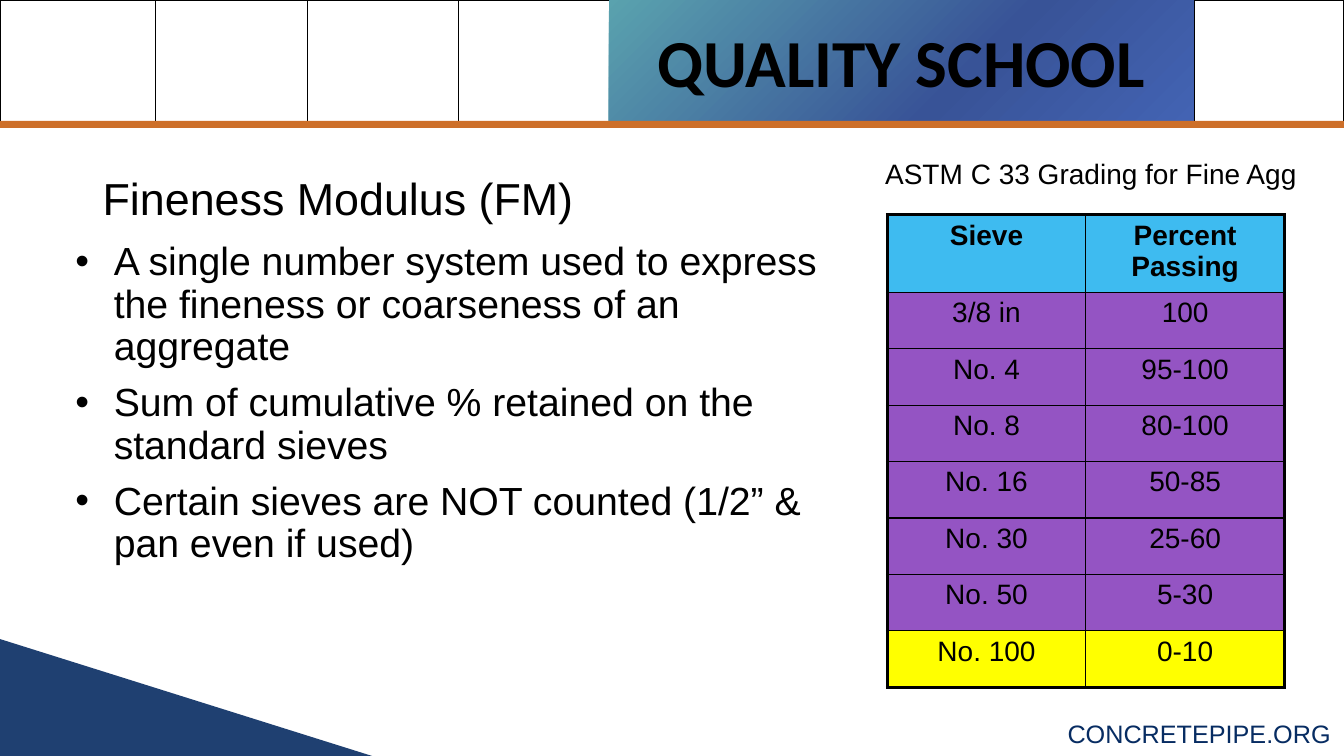
"""Build the Fineness Modulus slide of the Quality School deck."""
import lxml.etree
import pptx
import pptx.dml.color
import pptx.enum.shapes
import pptx.enum.text
import pptx.oxml
import pptx.oxml.ns
import pptx.util

COLORS = {
    "ink": "000000",
    "teal": "5AA2AE",
    "indigo": "385397",
    "blue": "4363B3",
    "orange": "CD6F29",
    "navy": "072C62",
    "header": "3EBBF0",
    "purple": "9454C3",
    "yellow": "FFFF00",
}
EMU_PER_PX = 9144
SLIDE_WIDTH, SLIDE_HEIGHT = 1333, 750
RECTANGLE = pptx.enum.shapes.MSO_SHAPE.RECTANGLE
CENTER = pptx.enum.text.PP_ALIGN.CENTER
FRAME_SPANS = [(0, 154), (154, 305), (305, 455), (455, 606), (1185, 1333)]
BULLETS = [
    "A single number system used to express the fineness or coarseness of an aggregate",
    "Sum of cumulative % retained on the standard sieves",
    "Certain sieves are NOT counted (1/2” & pan even if used)",
]
GRADING = [
    ("Sieve", "Percent Passing"),
    ("3/8 in", "100"),
    ("No. 4", "95-100"),
    ("No. 8", "80-100"),
    ("No. 16", "50-85"),
    ("No. 30", "25-60"),
    ("No. 50", "5-30"),
    ("No. 100", "0-10"),
]


def px(*lengths):
    """Turn pixel lengths into EMU."""
    return [pptx.util.Emu(length * EMU_PER_PX) for length in lengths]


def rgb(name):
    """Look up a named colour."""
    return pptx.dml.color.RGBColor.from_string(COLORS[name])


def set_font(paragraph, size, color="ink", name="Arial", bold=False):
    """Format every run of a paragraph."""
    for run in paragraph.runs:
        run.font.name = name
        run.font.size = pptx.util.Pt(size)
        run.font.bold = bold
        run.font.color.rgb = rgb(color)


def add_shape(slide, kind, box, fill=None, line=None):
    """Add a preset shape with an optional fill and outline."""
    shape = slide.shapes.add_shape(kind, *px(*box))
    shape.shadow.inherit = False
    if fill:
        shape.fill.solid()
        shape.fill.fore_color.rgb = rgb(fill)
    else:
        shape.fill.background()
    if line:
        shape.line.color.rgb = rgb(line)
        shape.line.width = pptx.util.Pt(1)
    else:
        shape.line.fill.background()
    return shape


def set_gradient(shape, stops, angle):
    """Fill a shape with a linear gradient of (percent, colour) stops."""
    shape.fill.gradient()
    shape.fill.gradient_angle = angle
    stop_list = shape.element.find(".//" + pptx.oxml.ns.qn("a:gsLst"))
    for stop in list(stop_list):
        stop_list.remove(stop)
    for percent, color in stops:
        stop = lxml.etree.SubElement(
            stop_list, pptx.oxml.ns.qn("a:gs"), pos=str(percent * 1000))
        lxml.etree.SubElement(
            stop, pptx.oxml.ns.qn("a:srgbClr"), val=COLORS[color])


def add_text(slide, box, lines, size, color="ink", wrap=True, spacing=None):
    """Add a text box and return its text frame."""
    text_frame = slide.shapes.add_textbox(*px(*box)).text_frame
    text_frame.word_wrap = wrap
    text_frame.text = "\n".join(lines)
    for paragraph in text_frame.paragraphs:
        paragraph.line_spacing = spacing
        set_font(paragraph, size, color)
    return text_frame


def add_bullets(slide, box, lines):
    """Add a bulleted list with hanging indents."""
    text_frame = add_text(slide, box, lines, 28, spacing=0.9)
    indent = px(38)[0]
    for index, paragraph in enumerate(text_frame.paragraphs):
        if index:
            paragraph.space_before = pptx.util.Pt(10)
        properties = paragraph._p.get_or_add_pPr()
        properties.set("marL", str(indent))
        properties.set("indent", str(-indent))
        lxml.etree.SubElement(
            properties, pptx.oxml.ns.qn("a:buFont"), typeface="Arial")
        lxml.etree.SubElement(
            properties, pptx.oxml.ns.qn("a:buChar"), char="•")


def set_borders(cell, widths):
    """Draw cell borders from point widths keyed by side."""
    properties = cell._tc.get_or_add_tcPr()
    for side, width in widths.items():
        line = lxml.etree.SubElement(
            properties, pptx.oxml.ns.qn("a:ln" + side),
            w=str(pptx.util.Pt(width)))
        fill = lxml.etree.SubElement(line, pptx.oxml.ns.qn("a:solidFill"))
        lxml.etree.SubElement(
            fill, pptx.oxml.ns.qn("a:srgbClr"), val=COLORS["ink"])


def add_grading_table(slide, box, rows, header_height, row_height):
    """Add the sieve table with a heavy outer border."""
    last_row, last_column = len(rows) - 1, len(rows[0]) - 1
    table = slide.shapes.add_table(len(rows), len(rows[0]), *px(*box)).table
    table.first_row = table.horz_banding = False
    fills = {0: "header", last_row: "yellow"}
    for row_index, values in enumerate(rows):
        height = row_height if row_index else header_height
        table.rows[row_index].height = px(height)[0]
        for column_index, value in enumerate(values):
            cell = table.cell(row_index, column_index)
            outer = {
                "L": column_index == 0,
                "R": column_index == last_column,
                "T": row_index == 0,
                "B": row_index == last_row,
            }
            set_borders(cell, {side: 2.25 if edge else 1
                               for side, edge in outer.items()})
            cell.fill.solid()
            cell.fill.fore_color.rgb = rgb(fills.get(row_index, "purple"))
            cell.text_frame.text = value
            paragraph = cell.text_frame.paragraphs[0]
            paragraph.alignment = CENTER
            set_font(paragraph, 20, bold=row_index == 0)


def add_banner(slide):
    """Add the frames, gradient title and orange rule across the top."""
    for left, right in FRAME_SPANS:
        add_shape(slide, RECTANGLE, (left, 0, right - left, 121), line="ink")
    title = add_shape(slide, RECTANGLE, (604, 0, 580, 120))
    set_gradient(title, [(0, "teal"), (61, "indigo"), (100, "blue")], 315)
    title.text_frame.text = "QUALITY SCHOOL"
    title.text_frame.vertical_anchor = pptx.enum.text.MSO_ANCHOR.MIDDLE
    paragraph = title.text_frame.paragraphs[0]
    paragraph.alignment = CENTER
    set_font(paragraph, 48, name="Calibri", bold=True)
    add_shape(slide, RECTANGLE, (0, 120, SLIDE_WIDTH, 7), fill="orange")


def add_corner(slide):
    """Add the slightly transparent triangle in the lower left corner."""
    corner = add_shape(slide, pptx.enum.shapes.MSO_SHAPE.ISOSCELES_TRIANGLE,
                       (0, 634, 369, 116), fill="navy")
    corner.adjustments[0] = 0
    color = corner.element.spPr.find(".//" + pptx.oxml.ns.qn("a:srgbClr"))
    lxml.etree.SubElement(color, pptx.oxml.ns.qn("a:alpha"), val="90000")


def main():
    """Build and save the slide."""
    presentation = pptx.Presentation()
    presentation.slide_width, presentation.slide_height = px(
        SLIDE_WIDTH, SLIDE_HEIGHT)
    slide = presentation.slides.add_slide(presentation.slide_layouts[6])
    add_banner(slide)
    add_corner(slide)
    add_text(slide, (1049, 708, 284, 40), ["CONCRETEPIPE.ORG"], 18, "navy",
             wrap=False)
    add_bullets(slide, (65, 235, 789, 425), BULLETS)
    add_grading_table(slide, (880, 213, 394, 469), GRADING, 77, 56)
    add_text(slide, (868, 150, 431, 44), ["ASTM C 33 Grading for Fine Agg"],
             20, wrap=False)
    add_text(slide, (92, 170, 700, 65), ["Fineness Modulus (FM)"], 32,
             spacing=0.9)
    presentation.save("out.pptx")


if __name__ == "__main__":
    main()
